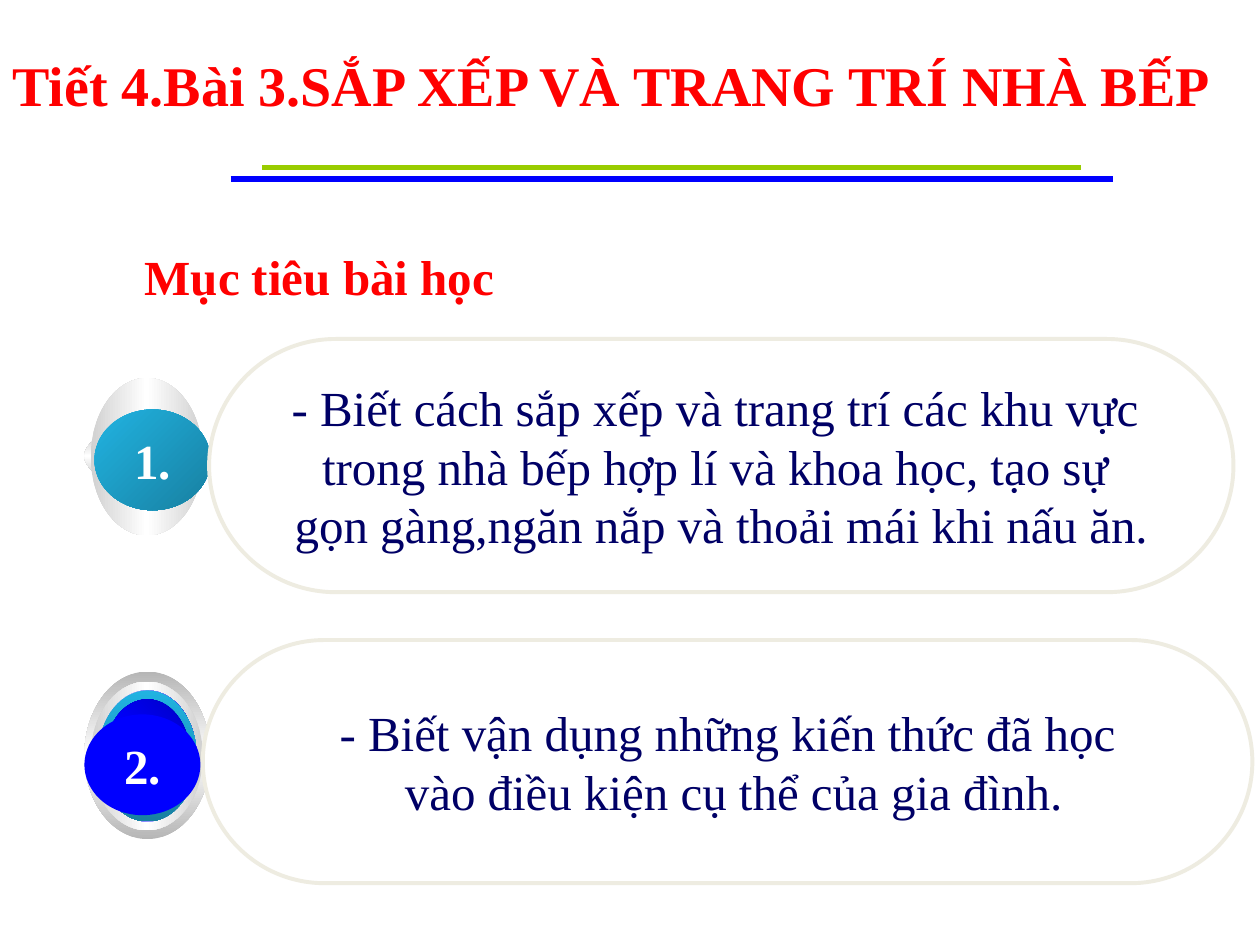
import pptx
import pptx.util
import pptx.dml.color
import pptx.enum.shapes
import pptx.enum.text
import pptx.oxml
import pptx.oxml.ns
from lxml import etree

Inches, Pt = pptx.util.Inches, pptx.util.Pt
RGBColor = pptx.dml.color.RGBColor
Shape = pptx.enum.shapes.MSO_SHAPE
Anchor = pptx.enum.text.MSO_ANCHOR
Align = pptx.enum.text.PP_ALIGN

FONT = "Times New Roman"
RED = RGBColor(0xFF, 0x00, 0x00)
WHITE = RGBColor(0xFF, 0xFF, 0xFF)
NAVY = RGBColor(0x00, 0x00, 0x66)
BLUE = RGBColor(0x00, 0x00, 0xFF)
GREEN = RGBColor(0x99, 0xCC, 0x00)
CREAM = RGBColor(0xEE, 0xEC, 0xE1)
GRAY = RGBColor(0xB6, 0xB6, 0xB6)
SILVER = RGBColor(0xD1, 0xD1, 0xD1)
CYAN = RGBColor(0x21, 0xB3, 0xE1)
TEAL = RGBColor(0x18, 0x80, 0xA1)
DARK_BLUE = RGBColor(0x00, 0x00, 0xC3)

TITLE = "Tiết 4.Bài 3.SẮP XẾP VÀ TRANG TRÍ NHÀ BẾP"
HEADING = "Mục tiêu bài học"

# Rules under the title: left, right, y, colour
RULES = [(2.08, 8.58, 1.33, GREEN), (1.83, 8.83, 1.42, BLUE)]

# Rings of a badge, back to front: left, width, gradient colours, angle
RINGS = [
    (0.67, 1.00, (GRAY, WHITE, GRAY), 90),
    (0.72, 0.89, (SILVER, WHITE, SILVER), 0),
    (0.78, 0.78, (WHITE, BLUE, WHITE), 45),
    (0.78, 0.78, (CYAN, TEAL), 90),
    (0.83, 0.68, (DARK_BLUE, BLUE, DARK_BLUE), 315),
]

GOALS = [
    {
        "number": "1.",
        "rings": [(3.38, 0.48), (3.00, 1.25), (3.44, 0.37), (3.44, 0.37), (3.50, 0.32)],
        "disc": (0.75, 3.25, 0.92, 0.80),
        "disc_fill": ((CYAN, TEAL), 45),
        "panel": (1.66, 2.69, 8.13, 2.01),
        "lines": [
            "- Biết cách sắp xếp và trang trí các khu vực ",
            "trong nhà bếp hợp lí và khoa học, tạo sự ",
            "gọn gàng,ngăn nắp và thoải mái khi nấu ăn.",
        ],
    },
    {
        "number": "2.",
        "rings": [(5.33, 1.33), (5.41, 1.18), (5.48, 1.04), (5.48, 1.04), (5.55, 0.91)],
        "disc": (0.67, 5.67, 0.92, 0.80),
        "disc_fill": ((BLUE,), 0),
        "panel": (1.61, 5.08, 8.33, 1.93),
        "lines": [
            "- Biết vận dụng những kiến thức đã học",
            " vào điều kiện cụ thể của gia đình.",
        ],
    },
]


def write_text(shape, lines, color, size=28, bold=False, align=Align.LEFT,
               anchor=Anchor.MIDDLE, wrap=True):
    frame = shape.text_frame
    frame.word_wrap = wrap
    frame.vertical_anchor = anchor
    for index, line in enumerate(lines):
        paragraph = frame.add_paragraph() if index else frame.paragraphs[0]
        paragraph.alignment = align
        run = paragraph.add_run()
        run.text = line
        run.font.name = FONT
        run.font.size = Pt(size)
        run.font.bold = bold
        run.font.color.rgb = color


def fill_gradient(shape, colors, angle):
    """Fill with evenly spaced colours; the angle runs clockwise in degrees."""
    last = len(colors) - 1
    stops = "".join(
        f'<a:gs pos="{100000 * index // last}"><a:srgbClr val="{color}"/></a:gs>'
        for index, color in enumerate(colors))
    gradient = pptx.oxml.parse_xml(
        f'<a:gradFill {pptx.oxml.ns.nsdecls("a")} rotWithShape="1"><a:gsLst>{stops}</a:gsLst>'
        f'<a:lin ang="{angle * 60000}" scaled="1"/></a:gradFill>')
    shape.element.spPr.find(pptx.oxml.ns.qn("a:prstGeom")).addnext(gradient)


def add_shape(shapes, kind, box, colors, angle=0, outline=None):
    shape = shapes.add_shape(kind, *map(Inches, box))
    shape.shadow.inherit = False
    if len(colors) == 1:
        shape.fill.solid()
        shape.fill.fore_color.rgb = colors[0]
    else:
        fill_gradient(shape, colors, angle)
    if outline is None:
        shape.line.fill.background()
    else:
        shape.line.color.rgb = outline
        shape.line.width = Pt(2.25)
    return shape


def add_rule(slide, left, right, y, color):
    rule = slide.shapes.add_connector(
        pptx.enum.shapes.MSO_CONNECTOR.STRAIGHT,
        Inches(left), Inches(y), Inches(right), Inches(y))
    rule.line.color.rgb = color
    rule.line.width = Pt(3)
    etree.SubElement(rule.element.spPr, pptx.oxml.ns.qn("a:effectLst"))


def add_goal(slide, goal):
    badge = slide.shapes.add_group_shape().shapes
    for (left, width, colors, angle), (top, height) in zip(RINGS, goal["rings"]):
        add_shape(badge, Shape.OVAL, (left, top, width, height), colors, angle)
    disc = add_shape(badge, Shape.OVAL, goal["disc"], *goal["disc_fill"])
    write_text(disc, [goal["number"]], WHITE, bold=True, align=Align.CENTER)

    panel = add_shape(slide.shapes, Shape.ROUNDED_RECTANGLE, goal["panel"], (WHITE,),
                      outline=CREAM)
    panel.adjustments[0] = 0.5
    write_text(panel, goal["lines"], NAVY, align=Align.CENTER, wrap=False)


def main():
    presentation = pptx.Presentation()
    presentation.slide_width = Inches(10)
    presentation.slide_height = Inches(7.5)
    slide = presentation.slides.add_slide(presentation.slide_layouts[6])

    title = slide.shapes.add_textbox(Inches(0), Inches(0.08), Inches(10), Inches(1.17))
    write_text(title, [TITLE], RED, size=32, bold=True)
    for rule in RULES:
        add_rule(slide, *rule)
    heading = slide.shapes.add_textbox(Inches(1.05), Inches(1.91), Inches(5.03), Inches(0.57))
    write_text(heading, [HEADING], RED, bold=True, anchor=Anchor.TOP)
    for goal in GOALS:
        add_goal(slide, goal)

    presentation.save("out.pptx")


if __name__ == "__main__":
    main()
